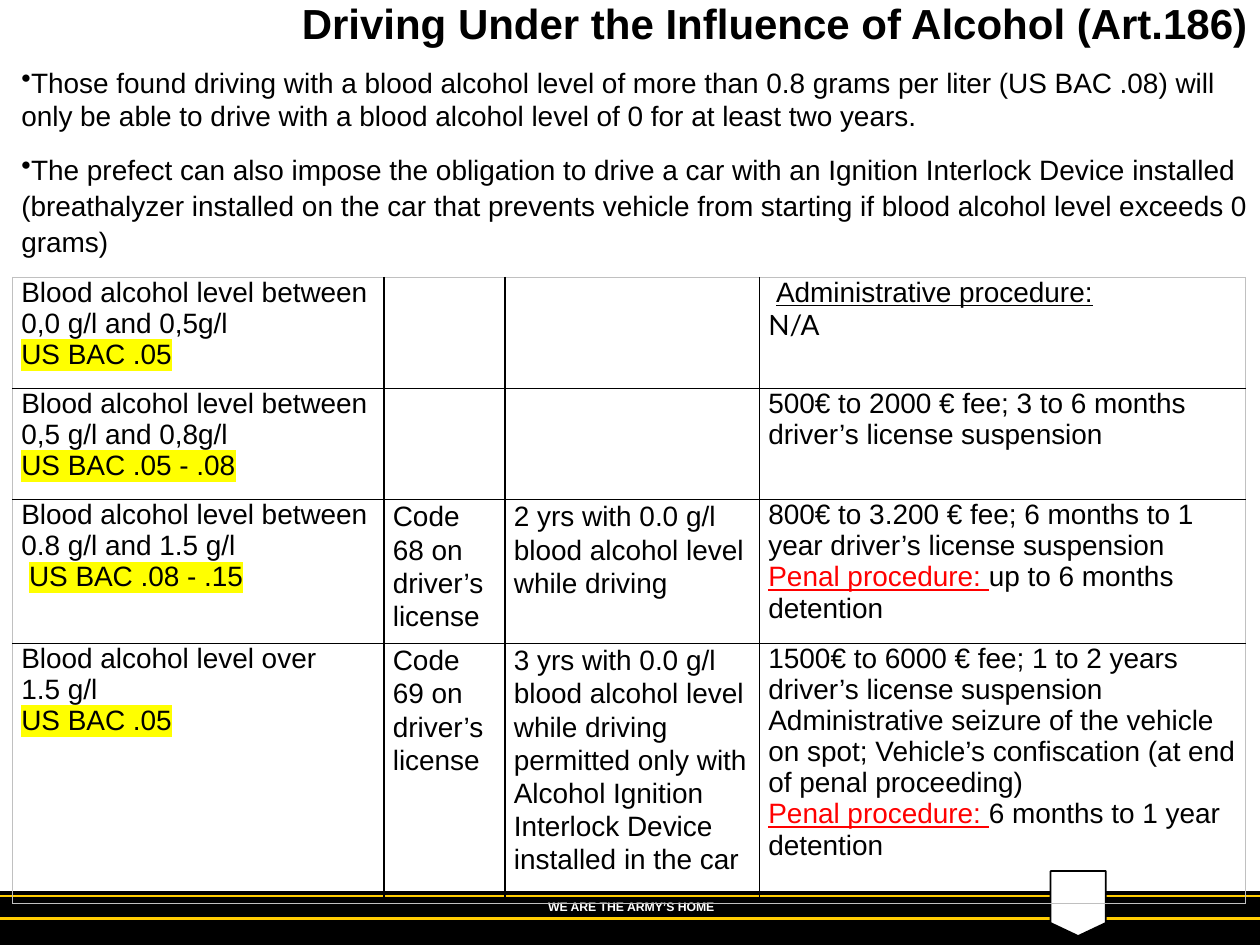
from lxml.etree import SubElement
from pptx import Presentation
from pptx.dml.color import RGBColor
from pptx.enum.shapes import MSO_CONNECTOR, MSO_SHAPE
from pptx.enum.text import MSO_ANCHOR, PP_ALIGN
from pptx.oxml.ns import qn
from pptx.util import Cm, Pt

BLACK, WHITE, GOLD, RED = "000000", "FFFFFF", "FFCC01", "FF0000"
YELLOW, GREY = "FFFF00", "C0C0C0"
COLS = [7.49, 2.44, 5.13, 9.8]
ROWS = [2.24, 2.24, 2.68, 5.24]

LEVELS = [
    (["Blood alcohol level between", "0,0 g/l and 0,5g/l"], "US BAC .05"),
    (["Blood alcohol level between", "0,5 g/l and 0,8g/l"], "US BAC .05 - .08"),
    (["Blood alcohol level between", "0.8 g/l and 1.5 g/l"], "US BAC .08 - .15"),
    (["Blood alcohol level over", "1.5 g/l"], "US BAC .05"),
]
CODES = ["", "", "Code 68 on driver’s license", "Code 69 on driver’s license"]
LIMITS = [
    "",
    "",
    "2 yrs with 0.0 g/l blood alcohol level while driving",
    "3 yrs with 0.0 g/l blood alcohol level while driving permitted only with "
    "Alcohol Ignition Interlock Device installed in the car",
]
PENALTIES = [
    [],
    ["500€ to 2000 € fee; 3 to 6 months driver’s license suspension"],
    ["800€ to 3.200 € fee; 6 months to 1 year driver’s license suspension"],
    ["1500€ to 6000 € fee; 1 to 2 years driver’s license suspension",
     "Administrative seizure of the vehicle on spot; Vehicle’s confiscation "
     "(at end of penal proceeding)"],
]
DETENTIONS = {2: "up to 6 months detention", 3: "6 months to 1 year detention"}
RULES = [
    "Those found driving with a blood alcohol level of more than 0.8 grams per liter "
    "(US BAC .08) will only be able to drive with a blood alcohol level of 0 for at "
    "least two years.",
    "The prefect can also impose the obligation to drive a car with an Ignition "
    "Interlock Device installed (breathalyzer installed on the car that prevents "
    "vehicle from starting if blood alcohol level exceeds 0 grams)",
]


def rgb(value):
    """Turn a hex string into a colour."""
    return RGBColor.from_string(value)


def set_font(p, size=16, color=BLACK, bold=False, name="Arial"):
    """Set the font of a whole paragraph."""
    f = p.font
    f.size, f.bold, f.name = Pt(size), bold, name
    f.color.rgb = rgb(color)


def next_paragraph(tf):
    """Return the first paragraph while it is empty, else a new one."""
    p = tf.paragraphs[0]
    return tf.add_paragraph() if p.runs else p


def add_paragraph(tf, text, **font):
    """Add a paragraph holding one run."""
    p = next_paragraph(tf)
    r = p.add_run()
    r.text = text
    set_font(p, **font)
    return p


def add_run(p, text, underline=None, color=None, highlight=None):
    """Add a run with its own marking."""
    r = p.add_run()
    r.text = text
    r.font.underline = underline
    if color:
        r.font.color.rgb = rgb(color)
    if highlight:
        hl = SubElement(r.font._element, qn("a:highlight"))
        SubElement(hl, qn("a:srgbClr"), val=highlight)


def add_text_box(slide, x, y, w, h):
    """Add a wrapping text box and return its frame."""
    tf = slide.shapes.add_textbox(Cm(x), Cm(y), Cm(w), Cm(h)).text_frame
    tf.word_wrap = True
    return tf


def add_shape(slide, kind, x, y, w, h, fill):
    """Add a filled preset shape with a black outline."""
    sp = slide.shapes.add_shape(kind, Cm(x), Cm(y), Cm(w), Cm(h))
    sp.shadow.inherit = False
    sp.fill.solid()
    sp.fill.fore_color.rgb = rgb(fill)
    sp.line.color.rgb = rgb(BLACK)
    sp.line.width = Pt(1)


def add_gold_line(slide, y):
    """Add a gold line across the slide."""
    line = slide.shapes.add_connector(MSO_CONNECTOR.STRAIGHT, 0, Cm(y), Cm(25.4), Cm(y))
    line.line.color.rgb = rgb(GOLD)
    line.line.width = Pt(1.5)
    SubElement(line._element.spPr, qn("a:effectLst"))


def add_footer(slide):
    """Add the black band with its lines, motto and shield."""
    add_shape(slide, MSO_SHAPE.RECTANGLE, 0, 17.98, 25.4, 1.07, BLACK)
    for y in (18.06, 18.52):
        add_gold_line(slide, y)
    tf = add_text_box(slide, 9.4, 18.01, 6.65, 0.56)
    p = add_paragraph(tf, "WE ARE THE ARMY’S HOME", size=7, color=WHITE, bold=True)
    p.alignment = PP_ALIGN.CENTER
    add_shape(slide, MSO_SHAPE.FLOWCHART_OFFPAGE_CONNECTOR, 21.18, 17.56, 1.11, 1.31, WHITE)


def add_title(slide, text):
    """Add the title at the top right."""
    tf = add_text_box(slide, 0, 0, 25.4, 2.08)
    tf.margin_top = Cm(0.06)
    p = add_paragraph(tf, text, size=24, bold=True)
    p.alignment = PP_ALIGN.RIGHT
    p.line_spacing = 0.9


def add_rules(slide):
    """Add the bulleted rules."""
    tf = add_text_box(slide, 0.18, 1.19, 25.4, 3.3)
    for text, spacing, before in zip(RULES, (1, 1.07), (0, 10)):
        p = next_paragraph(tf)
        p.line_spacing = spacing
        p.space_before = Pt(before)
        SubElement(p._p.get_or_add_pPr(), qn("a:buChar"), char="•")
        add_run(p, text)
        set_font(p)


def set_border(cell, side, color):
    """Draw one side of a cell."""
    ln = SubElement(cell._tc.get_or_add_tcPr(), qn(f"a:{side}"), w=str(Pt(0.75)))
    SubElement(SubElement(ln, qn("a:solidFill")), qn("a:srgbClr"), val=color)


def format_cell(cell, row, col):
    """Set margins, borders and fill of a cell."""
    cell.margin_left = cell.margin_right = Cm(0.18)
    cell.margin_top = cell.margin_bottom = 0
    cell.vertical_anchor = MSO_ANCHOR.TOP
    edges = {"lnL": col == 0, "lnR": col == len(COLS) - 1,
             "lnT": row == 0, "lnB": row == len(ROWS) - 1}
    for side, outer in edges.items():
        set_border(cell, side, GREY if outer else BLACK)
    cell.fill.background()


def fill_row(cells, row):
    """Write the level, code, limit and penalty of one row."""
    level, code, limit, penalty = (cell.text_frame for cell in cells)
    lines, bac = LEVELS[row]
    for text in lines:
        add_paragraph(level, text)
    p = next_paragraph(level)
    if row == 2:
        add_run(p, " ")
    add_run(p, bac, highlight=YELLOW)
    set_font(p)
    for tf, text in ((code, CODES[row]), (limit, LIMITS[row])):
        if text:
            add_paragraph(tf, text).line_spacing = 1.07
    for text in PENALTIES[row]:
        add_paragraph(penalty, text)
    if row == 0:
        p = next_paragraph(penalty)
        add_run(p, "\u00a0")
        add_run(p, "Administrative procedure:", underline=True)
        set_font(p)
        add_paragraph(penalty, "N/A", name="Lato")
    if row in DETENTIONS:
        p = next_paragraph(penalty)
        add_run(p, "Penal procedure: ", underline=True, color=RED)
        add_run(p, DETENTIONS[row])
        set_font(p)


def add_penalty_table(slide):
    """Add the table of alcohol levels and penalties."""
    table = slide.shapes.add_table(len(ROWS), len(COLS), Cm(0.25), Cm(5.59),
                                   Cm(sum(COLS)), Cm(sum(ROWS))).table
    table.first_row = table.horz_banding = False
    for column, width in zip(table.columns, COLS):
        column.width = Cm(width)
    for i, height in enumerate(ROWS):
        row = table.rows[i]
        row.height = Cm(height)
        for j, cell in enumerate(row.cells):
            format_cell(cell, i, j)
        fill_row(row.cells, i)


def main():
    """Build the slide and save it."""
    prs = Presentation()
    prs.slide_width, prs.slide_height = Cm(25.4), Cm(19.05)
    slide = prs.slides.add_slide(prs.slide_layouts[6])
    add_footer(slide)
    add_title(slide, "Driving Under the Influence of Alcohol (Art.186)")
    add_rules(slide)
    add_penalty_table(slide)
    prs.save("out.pptx")


if __name__ == "__main__":
    main()
